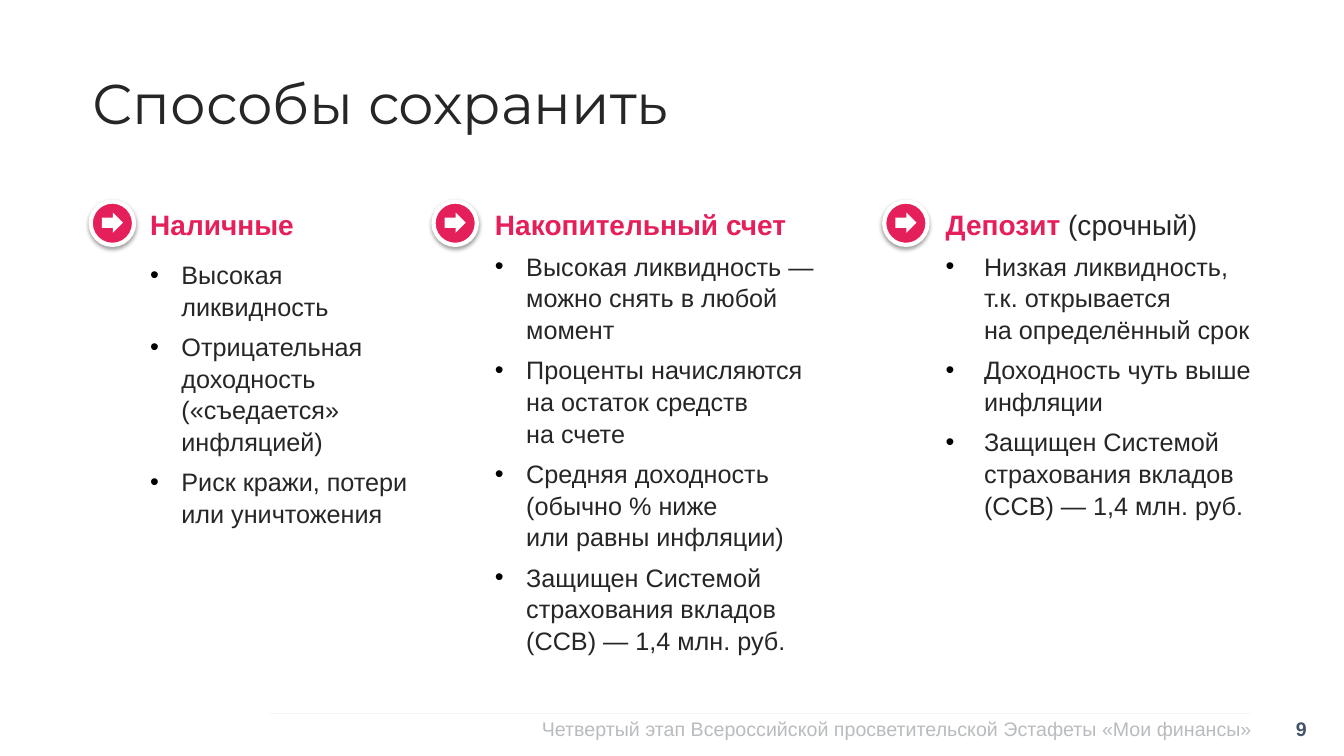
from lxml import etree
from pptx import Presentation
from pptx.dml.color import RGBColor
from pptx.enum.shapes import MSO_CONNECTOR, MSO_SHAPE
from pptx.enum.text import PP_ALIGN
from pptx.oxml import parse_xml
from pptx.oxml.ns import nsdecls, qn
from pptx.util import Inches, Pt

PINK = "E51F59"
DARK = "262626"
WHITE = "FFFFFF"

# marker left, text left, text width, text height, indent, space before, space after
COLUMNS = [
    ((0.9, 1.49, 2.83, 3.49, 0.31, 6, 0), "Наличные", "", [
        "Высокая ликвидность",
        "Отрицательная доходность («съедается» инфляцией)",
        "Риск кражи, потери или уничтожения",
    ]),
    ((4.3, 4.91, 3.2, 4.41, 0.31, 0, 6), "Накопительный счет", "", [
        "Высокая ликвидность — можно снять в любой момент",
        "Проценты начисляются на остаток средств \nна счете",
        "Средняя доходность (обычно % ниже \nили равны инфляции)",
        "Защищен Системой страхования вкладов (ССВ) — 1,4 млн. руб.",
    ]),
    ((8.77, 9.38, 3.05, 3.96, 0.38, 0, 6), "Депозит ", "(срочный)", [
        "Низкая ликвидность, т.к. открывается \nна определённый срок",
        "Доходность чуть выше инфляции",
        "Защищен Системой страхования вкладов (ССВ) — 1,4 млн. руб.",
    ]),
]


def color(hex_value):
    return RGBColor.from_string(hex_value)


def add_text_frame(slide, left, top, width, height):
    box = slide.shapes.add_textbox(Inches(left), Inches(top), Inches(width), Inches(height))
    frame = box.text_frame
    frame.word_wrap = True
    frame.margin_left = frame.margin_right = frame.margin_top = frame.margin_bottom = 0
    return frame


def add_text(paragraph, text, size, hex_value, bold=False, font="Arial"):
    """Add runs to the paragraph, with a line break at each newline."""
    for number, line in enumerate(text.split("\n")):
        if number:
            paragraph.add_line_break()
        run = paragraph.add_run()
        run.text = line
        run.font.name = font
        run.font.size = Pt(size)
        run.font.bold = bold
        run.font.color.rgb = color(hex_value)


def add_bullet(paragraph, indent):
    properties = paragraph._p.get_or_add_pPr()
    properties.set("marL", str(Inches(indent)))
    properties.set("indent", str(-Inches(indent)))
    bullet_color = etree.SubElement(properties, qn("a:buClr"))
    etree.SubElement(bullet_color, qn("a:srgbClr"), val="000000")
    etree.SubElement(properties, qn("a:buFont"), typeface="Arial")
    etree.SubElement(properties, qn("a:buChar"), char="•")


def add_white_or_pink_shape(slide, kind, left, top, width, height, fill):
    shape = slide.shapes.add_shape(kind, Inches(left), Inches(top), Inches(width), Inches(height))
    shape.fill.solid()
    shape.fill.fore_color.rgb = color(fill)
    shape.line.fill.background()
    shape.shadow.inherit = False
    return shape


def add_marker(slide, left, top=2):
    """Add a ringed disc with a soft shadow and an arrow inside it."""
    disc = add_white_or_pink_shape(slide, MSO_SHAPE.OVAL, left, top, 0.43, 0.43, PINK)
    disc.line.color.rgb = color(WHITE)
    disc.line.width = Pt(3)
    effects = disc._element.spPr.find(qn("a:effectLst"))
    effects.append(parse_xml(
        f'<a:outerShdw {nsdecls("a")} blurRad="{Pt(3.1)}" dist="{Pt(1.6)}" dir="5400000" '
        'algn="t" rotWithShape="0"><a:srgbClr val="000000"><a:alpha val="38000"/>'
        '</a:srgbClr></a:outerShdw>'))
    add_white_or_pink_shape(slide, MSO_SHAPE.RIGHT_ARROW, left + 0.11, top + 0.11, 0.21, 0.2, WHITE)


def add_column(slide, layout, heading, remark, points):
    marker_left, left, width, height, indent, before, after = layout
    frame = add_text_frame(slide, left, 2.04, width, height)
    title = frame.paragraphs[0]
    title.line_spacing = 1.05
    title.space_after = Pt(6)
    add_text(title, heading, 20, PINK, bold=True)
    if remark:
        add_text(title, remark, 20, DARK)
    for point in points:
        paragraph = frame.add_paragraph()
        add_bullet(paragraph, indent)
        paragraph.line_spacing = 1.05
        paragraph.space_before = Pt(before)
        paragraph.space_after = Pt(after)
        add_text(paragraph, point, 18, DARK)
    add_marker(slide, marker_left)


def add_title(slide, text):
    paragraph = add_text_frame(slide, 0.92, 0.76, 7.13, 0.72).paragraphs[0]
    paragraph.line_spacing = 0.9
    add_text(paragraph, text, 40, DARK, font="Montserrat")


def add_footer_text(slide, left, width, height, text, hex_value, bold=False):
    paragraph = add_text_frame(slide, left, 7.1, width, height).paragraphs[0]
    paragraph.alignment = PP_ALIGN.RIGHT
    paragraph.line_spacing = 1.05
    add_text(paragraph, text, 14, hex_value, bold)


def add_footer_rule(slide):
    rule = slide.shapes.add_connector(
        MSO_CONNECTOR.STRAIGHT, Inches(2.67), Inches(7.08), Inches(12.41), Inches(7.08))
    rule.line.color.rgb = color("F5F5F5")
    rule.line.width = Pt(1)
    etree.SubElement(rule._element.spPr, qn("a:effectLst"))


def main():
    presentation = Presentation()
    presentation.slide_width = Inches(13.33)
    presentation.slide_height = Inches(7.5)
    slide = presentation.slides.add_slide(presentation.slide_layouts[6])

    add_footer_rule(slide)
    add_footer_text(slide, 5.08, 7.34, 0.45,
                    "Четвертый этап Всероссийской просветительской Эстафеты «Мои финансы»", "B9BCBF")
    add_title(slide, "Способы сохранить")
    add_footer_text(slide, 12.41, 0.55, 0.4, "9", "44546A", bold=True)
    for layout, heading, remark, points in COLUMNS:
        add_column(slide, layout, heading, remark, points)

    presentation.save("out.pptx")


if __name__ == "__main__":
    main()
